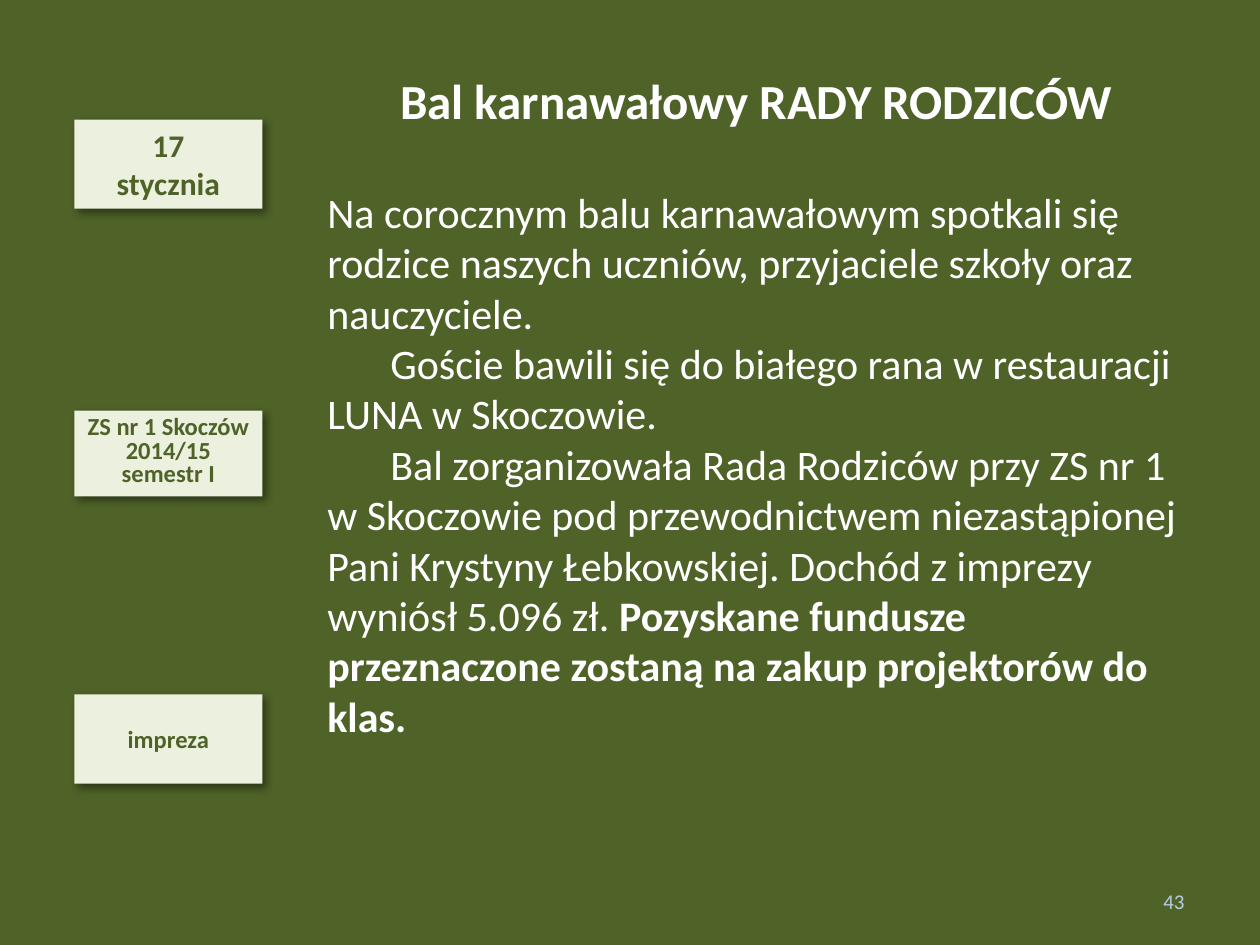
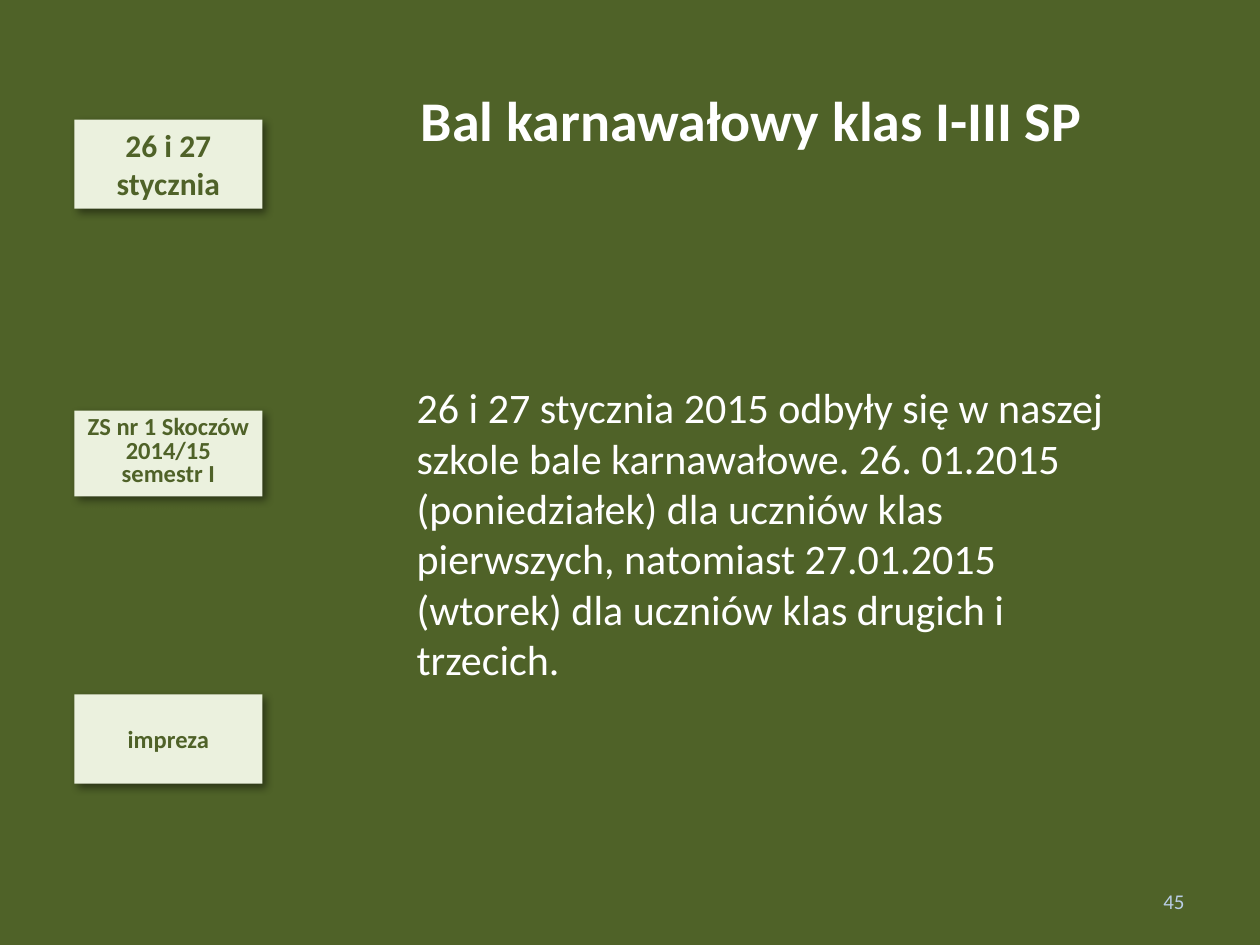
from dataclasses import dataclass

from lxml.etree import SubElement
from pptx import Presentation
from pptx.dml.color import RGBColor
from pptx.enum.shapes import MSO_SHAPE
from pptx.enum.text import MSO_ANCHOR, MSO_AUTO_SIZE, PP_ALIGN
from pptx.oxml.ns import qn
from pptx.util import Cm, Pt


# Theme
@dataclass(frozen=True)
class Theme:
    font: str = "Calibri"
    green: str = "4F6228"
    card: str = "EBF1DE"
    white: str = "FFFFFF"
    number: str = "B9CDE5"
    shadow: str = "000000"
    date_size: int = 18
    label_size: int = 14
    body_size: int = 24
    number_size: int = 12


THEME = Theme()


# Content types
@dataclass(frozen=True)
class Area:
    left: float
    top: float
    width: float
    height: float

    def lengths(self) -> list:
        return [Cm(value) for value in (self.left, self.top, self.width, self.height)]


@dataclass(frozen=True)
class Span:
    text: str
    bold: bool = False


@dataclass(frozen=True)
class Para:
    spans: tuple
    indent: float = 0


@dataclass(frozen=True)
class Style:
    size: int
    color: str
    bold: bool = False
    align: PP_ALIGN = PP_ALIGN.LEFT
    spacing: float = 1.0


@dataclass(frozen=True)
class Card:
    top: float
    height: float
    size: int
    lines: tuple
    anchor: MSO_ANCHOR = MSO_ANCHOR.MIDDLE
    spacing: float = 1.0


@dataclass(frozen=True)
class EventPage:
    number: str
    date: tuple
    title: str
    title_area: Area
    title_size: int
    body: tuple
    body_area: Area


# Shared layout, in centimetres
CARD_LEFT, CARD_WIDTH = 1.5, 3.79
FIRST_LINE_INDENT = 1.27
NUMBER_AREA = Area(18.21, 17.65, 5.92, 1.02)
SCHOOL_CARD = Card(8.28, 1.73, THEME.label_size,
                   ("ZS nr 1 Skoczów 2014/15", "semestr I"), MSO_ANCHOR.TOP, 0.8)
KIND_CARD = Card(14, 1.8, THEME.label_size, ("impreza",))

PAGES = (
    EventPage(
        "43", ("17", "stycznia"),
        "Bal karnawałowy RADY RODZICÓW", Area(7.72, 1.3, 15.04, 1.45), 28,
        (
            Para((Span("Na corocznym balu karnawałowym spotkali się rodzice naszych "
                       "uczniów, przyjaciele szkoły oraz nauczyciele."),)),
            Para((Span("Goście bawili się do białego rana w restauracji LUNA "
                       "w Skoczowie."),), FIRST_LINE_INDENT),
            Para((Span("Bal zorganizowała Rada Rodziców przy ZS nr 1 w Skoczowie pod "
                       "przewodnictwem niezastąpionej Pani Krystyny Łebkowskiej. "
                       "Dochód z imprezy wyniósł 5.096 zł. "),
                  Span("Pozyskane fundusze przeznaczone zostaną na zakup projektorów "
                       "do klas.", True)), FIRST_LINE_INDENT),
        ),
        Area(6.35, 3.63, 17.78, 11.53),
    ),
    EventPage(
        "45", ("26 i 27", "stycznia"),
        "Bal karnawałowy klas I-III SP", Area(8.15, 1.6, 14, 1.63), 32,
        (
            Para((Span("26 i 27 stycznia 2015 odbyły się w naszej szkole bale "
                       "karnawałowe. 26. 01.2015 (poniedziałek) dla uczniów klas "
                       "pierwszych, natomiast 27.01.2015 (wtorek) dla uczniów klas "
                       "drugich i trzecich."),)),
        ),
        Area(8.15, 7.57, 15.09, 6.4),
    ),
)


# Drawing helpers
def plain(*lines: str) -> tuple:
    return tuple(Para((Span(line),)) for line in lines)


def write(frame, paras: tuple, style: Style, frame_format: dict) -> None:
    for name, value in frame_format.items():
        setattr(frame, name, value)
    for index, para in enumerate(paras):
        paragraph = frame.paragraphs[0] if index == 0 else frame.add_paragraph()
        paragraph.alignment = style.align
        paragraph.line_spacing = style.spacing
        if para.indent:
            paragraph._p.get_or_add_pPr().set("indent", str(Cm(para.indent)))
        for span in para.spans:
            run = paragraph.add_run()
            run.text = span.text
            font_format = {"name": THEME.font, "size": Pt(style.size),
                           "bold": style.bold or span.bold}
            for name, value in font_format.items():
                setattr(run.font, name, value)
            run.font.color.rgb = RGBColor.from_string(style.color)


def add_text(page, area: Area, paras: tuple, style: Style, **frame_format) -> None:
    box = page.shapes.add_textbox(*area.lengths())
    write(box.text_frame, paras, style, {"word_wrap": True, **frame_format})


def add_shadow(shape) -> None:
    shape.shadow.inherit = False
    effects = shape._element.spPr.find(qn("a:effectLst"))
    outer = SubElement(effects, qn("a:outerShdw"), blurRad=str(Pt(5)), dist=str(Pt(3)),
                       dir=str(45 * 60000), algn="tl", rotWithShape="0")
    color = SubElement(outer, qn("a:srgbClr"), val=THEME.shadow)
    SubElement(color, qn("a:alpha"), val="43000")


def add_card(page, card: Card) -> None:
    area = Area(CARD_LEFT, card.top, CARD_WIDTH, card.height)
    shape = page.shapes.add_shape(MSO_SHAPE.RECTANGLE, *area.lengths())
    shape.fill.solid()
    shape.fill.fore_color.rgb = RGBColor.from_string(THEME.card)
    shape.line.fill.background()
    add_shadow(shape)
    style = Style(card.size, THEME.green, True, PP_ALIGN.CENTER, card.spacing)
    write(shape.text_frame, plain(*card.lines), style,
          {"word_wrap": True, "vertical_anchor": card.anchor})


def add_page(deck, event: EventPage) -> None:
    page = deck.slides.add_slide(deck.slide_layouts[6])
    page.background.fill.solid()
    page.background.fill.fore_color.rgb = RGBColor.from_string(THEME.green)

    # Cards on the left and the page number
    date_card = Card(2.41, 1.8, THEME.date_size, event.date)
    for card in (date_card, KIND_CARD, SCHOOL_CARD):
        add_card(page, card)
    add_text(page, NUMBER_AREA, plain(event.number),
             Style(THEME.number_size, THEME.number, align=PP_ALIGN.RIGHT),
             vertical_anchor=MSO_ANCHOR.MIDDLE)

    # Title and story
    add_text(page, event.title_area, plain(event.title),
             Style(event.title_size, THEME.white, True, PP_ALIGN.CENTER),
             word_wrap=False, auto_size=MSO_AUTO_SIZE.SHAPE_TO_FIT_TEXT)
    add_text(page, event.body_area, event.body, Style(THEME.body_size, THEME.white),
             auto_size=MSO_AUTO_SIZE.SHAPE_TO_FIT_TEXT)


def main() -> None:
    deck = Presentation()
    deck.slide_width, deck.slide_height = Cm(25.4), Cm(19.05)
    for event in PAGES:
        add_page(deck, event)
    deck.save("out.pptx")


if __name__ == "__main__":
    main()
